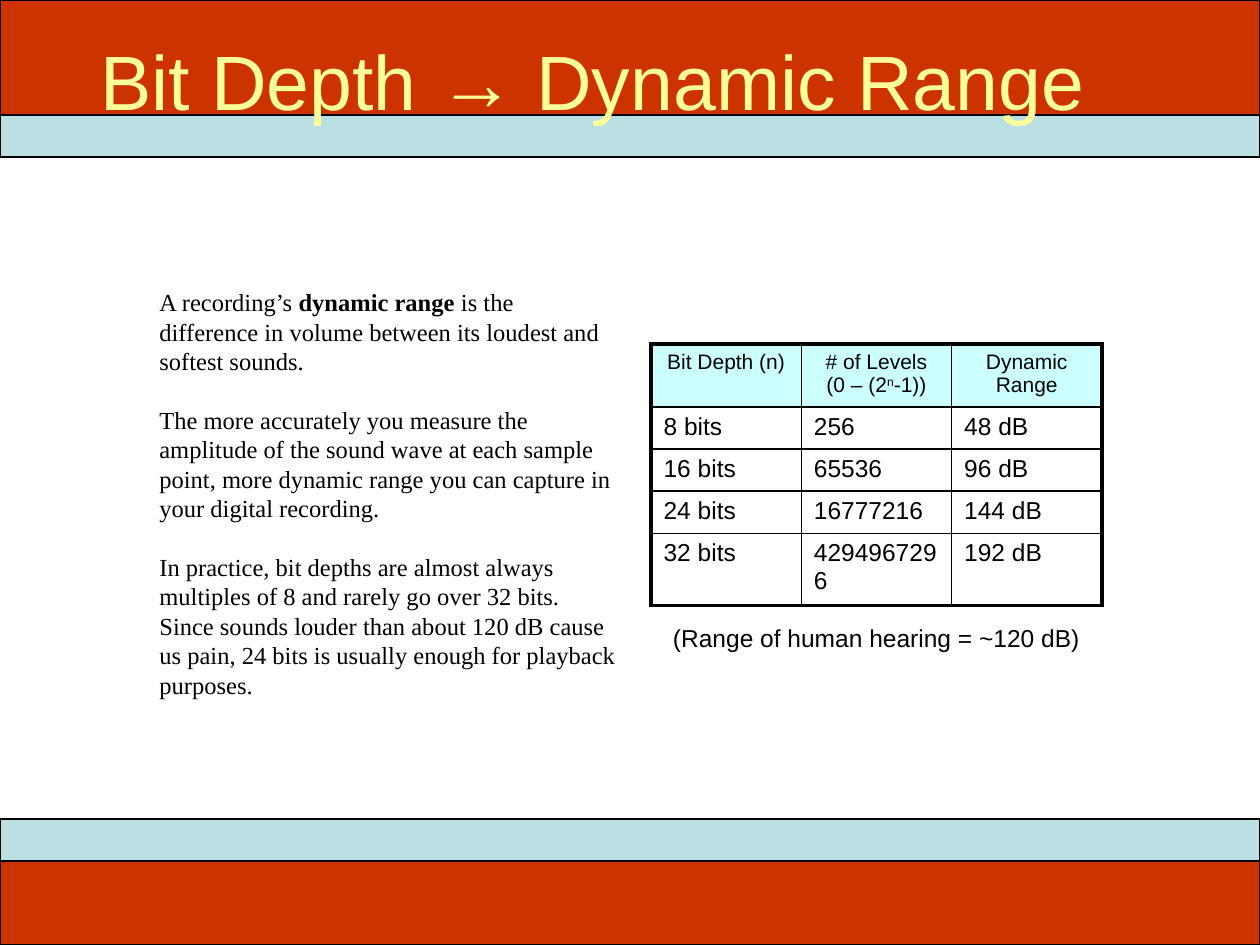
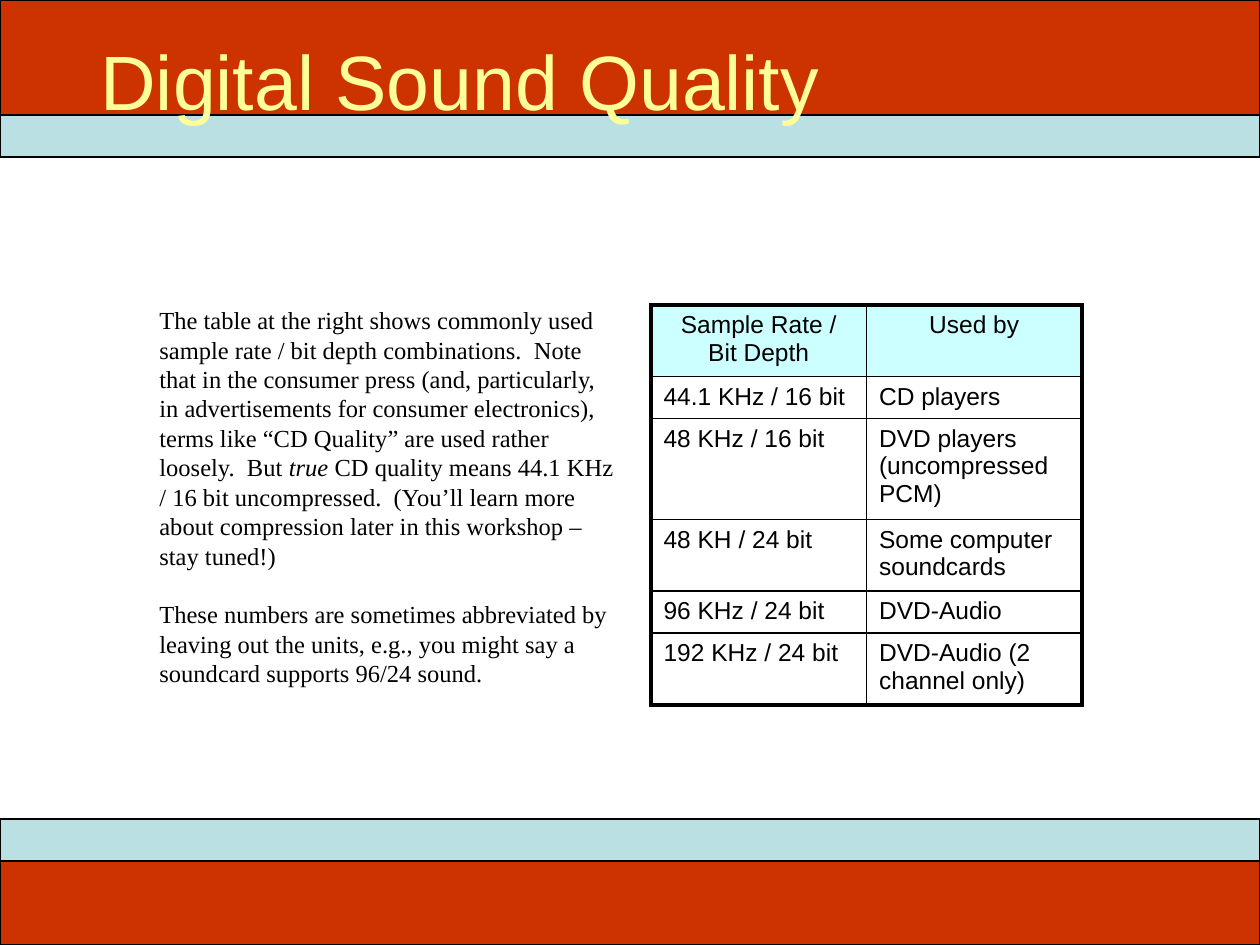
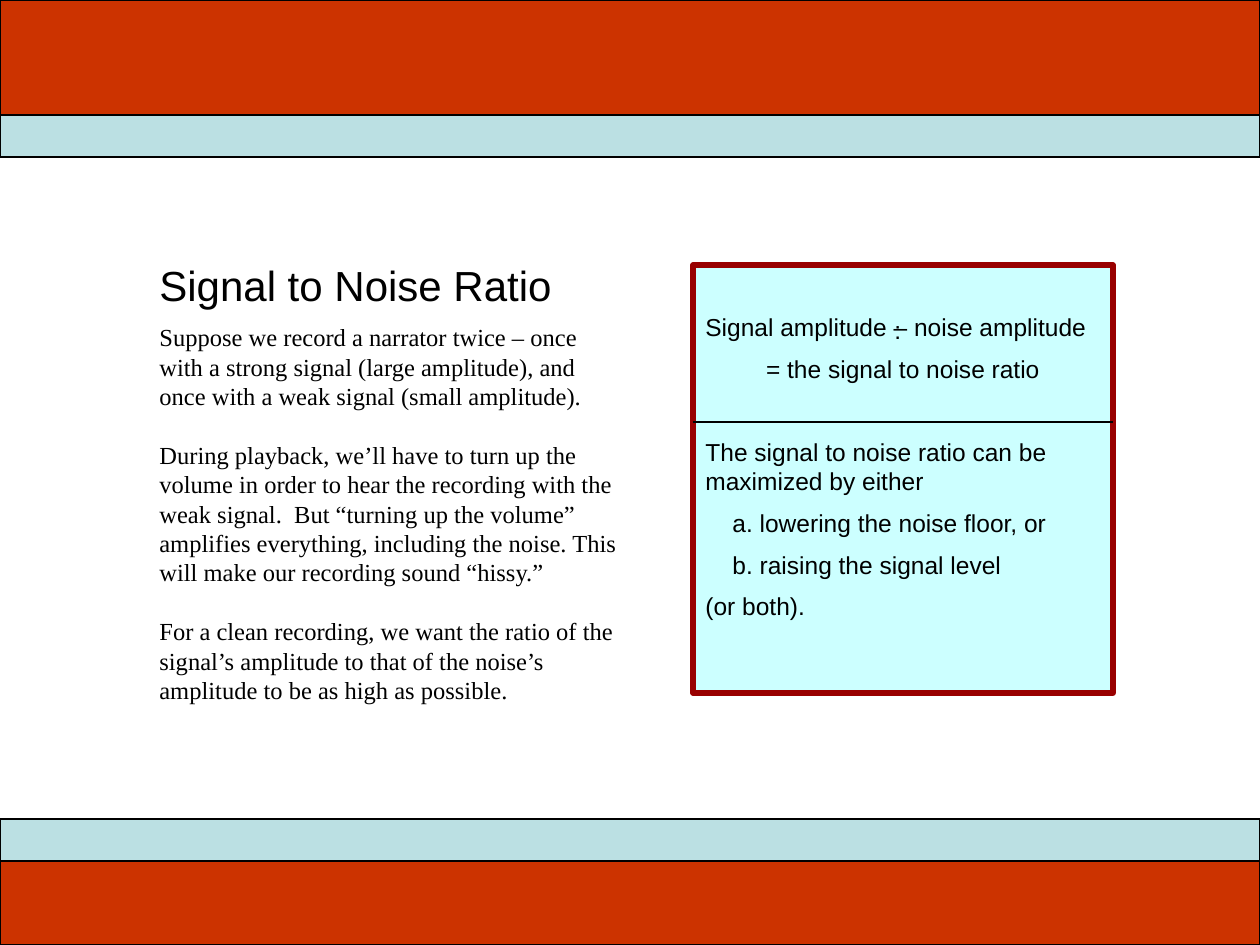
from lxml import etree
from pptx import Presentation
from pptx import util as u
from pptx.dml.color import RGBColor
from pptx.enum import shapes, text
from pptx.oxml.ns import qn

PX_PER_INCH = 126
WIDTH, HEIGHT = 1260, 945
BODY_LEFT, BODY_WIDTH = 147, 483
TABLE_LEFT = 651

RED, AQUA, YELLOW = "CC3300", "BBE0E3", "FFFF99"
PALE, DARK_RED, BLACK = "CCFFFF", "990000", "000000"

LINE_PITCH = 16.8
SMALL_GAP = 7
CENTER = {"alignment": text.PP_ALIGN.CENTER}
THIN, THICK = 1, 2.25


def px(length):
    return u.Emu(round(length * 914400 / PX_PER_INCH))


def color(value):
    return RGBColor.from_string(value)


def apply(target, values):
    for name, value in values.items():
        setattr(target, name, value)


class Deck:
    """Holds the style of the presentation and the current slide."""

    def __init__(self):
        self.presentation = Presentation()
        apply(self.presentation, {"slide_width": px(WIDTH), "slide_height": px(HEIGHT)})
        self.slide = None

    def new_slide(self):
        self.slide = self.presentation.slides.add_slide(self.presentation.slide_layouts[6])
        for top, height, fill in ((0, 115, RED), (861, 84, RED), (819, 42, AQUA), (115, 42, AQUA)):
            self.rectangle(0, top, WIDTH, height, fill)

    def rectangle(self, left, top, width, height, fill, line=BLACK, points=0.75):
        shape = self.slide.shapes.add_shape(
            shapes.MSO_SHAPE.RECTANGLE, px(left), px(top), px(width), px(height))
        shape.shadow.inherit = False
        shape.fill.solid()
        shape.fill.fore_color.rgb = color(fill)
        shape.line.color.rgb = color(line)
        shape.line.width = u.Pt(points)
        return shape

    def line(self, left, top, right, bottom):
        connector = self.slide.shapes.add_connector(
            shapes.MSO_CONNECTOR.STRAIGHT, px(left), px(top), px(right), px(bottom))
        connector.line.color.rgb = color(BLACK)
        connector.line.width = u.Pt(0.75)
        etree.SubElement(connector._element.spPr, qn("a:effectLst"))

    def fill_paragraph(self, paragraph, runs, size=14, font="Arial", ink=BLACK, **layout):
        """Fill a paragraph from a string or a list of strings and (string, format) pairs."""
        apply(paragraph, {"alignment": text.PP_ALIGN.LEFT, **layout})
        for part in [runs] if isinstance(runs, str) else runs:
            words, extra = (part, {}) if isinstance(part, str) else part
            run = paragraph.add_run()
            run.text = words
            apply(run.font, {"name": font, "size": u.Pt(size), "bold": False,
                             **{key: extra[key] for key in extra if key != "baseline"}})
            run.font.color.rgb = color(ink)
            if "baseline" in extra:
                run._r.get_or_add_rPr().set("baseline", str(extra["baseline"]))

    def text_box(self, left, top, width, height, paragraphs, gap=0,
                 anchor=text.MSO_ANCHOR.TOP, **style):
        box = self.slide.shapes.add_textbox(px(left), px(top), px(width), px(height))
        frame = box.text_frame
        apply(frame, {"word_wrap": True, "vertical_anchor": anchor})
        for index, runs in enumerate(paragraphs):
            paragraph = frame.add_paragraph() if index else frame.paragraphs[0]
            self.fill_paragraph(paragraph, runs, space_before=u.Pt(gap if index else 0), **style)

    def title(self, words):
        self.text_box(88, 1, 1134, 158, [words], anchor=text.MSO_ANCHOR.MIDDLE,
                      size=44, ink=YELLOW)

    def body(self, top, height, paragraphs):
        self.text_box(BODY_LEFT, top, BODY_WIDTH, height, paragraphs, gap=LINE_PITCH,
                      font="Times New Roman", line_spacing=u.Pt(LINE_PITCH))

    def borders(self, cell, widths):
        properties = cell._tc.get_or_add_tcPr()
        for side, points in zip("LRTB", widths):
            line = etree.SubElement(properties, qn("a:ln" + side), w=str(u.Pt(points)))
            fill = etree.SubElement(line, qn("a:solidFill"))
            etree.SubElement(fill, qn("a:srgbClr"), val=BLACK)

    def table(self, top, width, heights, rows, header_size):
        last_row, last_column = len(rows) - 1, len(rows[0]) - 1
        table = self.slide.shapes.add_table(
            len(rows), len(rows[0]), px(TABLE_LEFT), px(top), px(width), px(sum(heights))).table
        apply(table, {"first_row": False, "horz_banding": False})
        for column in table.columns:
            column.width = px(width / len(rows[0]))
        for r, (height, row) in enumerate(zip(heights, rows)):
            table.rows[r].height = px(height)
            for c, runs in enumerate(row):
                cell = table.cell(r, c)
                edges = (c == 0, c == last_column, r == 0, r == last_row)
                self.borders(cell, [THICK if edge else THIN for edge in edges])
                paragraph = cell.text_frame.paragraphs[0]
                if r == 0:
                    cell.fill.solid()
                    cell.fill.fore_color.rgb = color(PALE)
                    self.fill_paragraph(paragraph, runs, header_size, **CENTER)
                else:
                    cell.fill.background()
                    self.fill_paragraph(paragraph, runs)


def bit_depth(deck):
    deck.new_slide()
    deck.body(281, 428, [
        ["A recording’s ", ("dynamic range", {"bold": True}),
         " is the difference in volume between its loudest and softest sounds."],
        "The more accurately you measure the amplitude of the sound wave at each sample "
        "point, more dynamic range you can capture in your digital recording.",
        "In practice, bit depths are almost always multiples of 8 and rarely go over 32 bits.  "
        "Since sounds louder than about 120 dB cause us pain, 24 bits is usually enough for "
        "playback purposes.",
    ])
    deck.table(344, 451, [63, 42, 42, 42, 72], [
        ["Bit Depth (n)", ["# of Levels (0 – (2", ("n", {"baseline": 30000}), "-1))"],
         "Dynamic Range"],
        ["8 bits", "256", "48 dB"],
        ["16 bits", "65536", "96 dB"],
        ["24 bits", "16777216", "144 dB"],
        ["32 bits", "4294967296", "192 dB"],
    ], header_size=12)
    deck.text_box(TABLE_LEFT, 617, 451, 42, ["(Range of human hearing = ~120 dB)"], **CENTER)
    deck.title("Bit Depth → Dynamic Range")


def sound_quality(deck):
    deck.new_slide()
    deck.body(299, 398, [
        ["The table at the right shows commonly used sample rate / bit depth combinations.  "
         "Note that in the consumer press (and, particularly, in advertisements for consumer "
         "electronics), terms like “CD Quality” are used rather loosely.  But ",
         ("true", {"italic": True}),
         " CD quality means 44.1 KHz / 16 bit uncompressed.  (You’ll learn more about "
         "compression later in this workshop – stay tuned!)"],
        "These numbers are sometimes abbreviated by leaving out the units, e.g., you might "
        "say a soundcard supports 96/24 sound.",
    ])
    deck.table(305, 431, [71, 42, 101, 71, 42, 72], [
        ["Sample Rate / Bit Depth", "Used by"],
        ["44.1 KHz / 16 bit", "CD players"],
        ["48 KHz / 16 bit", "DVD players (uncompressed PCM)"],
        ["48 KH / 24 bit", "Some computer soundcards"],
        ["96 KHz / 24 bit", "DVD-Audio"],
        ["192 KHz / 24 bit", "DVD-Audio (2 channel only)"],
    ], header_size=14)
    deck.title("Digital Sound Quality")


def signal_to_noise(deck):
    deck.new_slide()
    deck.text_box(BODY_LEFT, 253, 546, 63, ["Signal to Noise Ratio"], size=24)
    deck.body(316, 393, [
        "Suppose we record a narrator twice – once with a strong signal (large amplitude), "
        "and once with a weak signal (small amplitude).",
        "During playback, we’ll have to turn up the volume in order to hear the recording "
        "with the weak signal.  But “turning up the volume” amplifies everything, including "
        "the noise. This will make our recording sound “hissy.”",
        "For a clean recording, we want the ratio of the signal’s amplitude to that of the "
        "noise’s amplitude to be as high as possible.",
    ])
    panel_left, panel_width = 693, 420
    panel = deck.rectangle(panel_left, 265, panel_width, 428, PALE, DARK_RED, 3)
    frame = panel.text_frame
    apply(frame, {"word_wrap": True, "vertical_anchor": text.MSO_ANCHOR.TOP,
                  "margin_top": px(47)})
    lines = [
        ("Signal amplitude – noise amplitude", 0, 0, {}),
        ("= the signal to noise ratio", SMALL_GAP, 0, CENTER),
        ("The signal to noise ratio can be maximized by either", 2 * SMALL_GAP + LINE_PITCH, 0, {}),
        ("a. lowering the noise floor, or", SMALL_GAP, 27, {}),
        ("b. raising the signal level", SMALL_GAP, 27, {}),
        ("(or both).", SMALL_GAP, 0, {}),
    ]
    for index, (words, gap, indent, layout) in enumerate(lines):
        paragraph = frame.add_paragraph() if index else frame.paragraphs[0]
        deck.fill_paragraph(paragraph, words, space_before=u.Pt(gap),
                            line_spacing=u.Pt(LINE_PITCH), **layout)
        paragraph._p.get_or_add_pPr().set("marL", str(px(indent)))
    deck.text_box(882, 309, 42, 42, [":"])
    deck.line(panel_left, 422, panel_left + panel_width, 422)


def main():
    deck = Deck()
    bit_depth(deck)
    sound_quality(deck)
    signal_to_noise(deck)
    deck.presentation.save("out.pptx")


if __name__ == "__main__":
    main()
